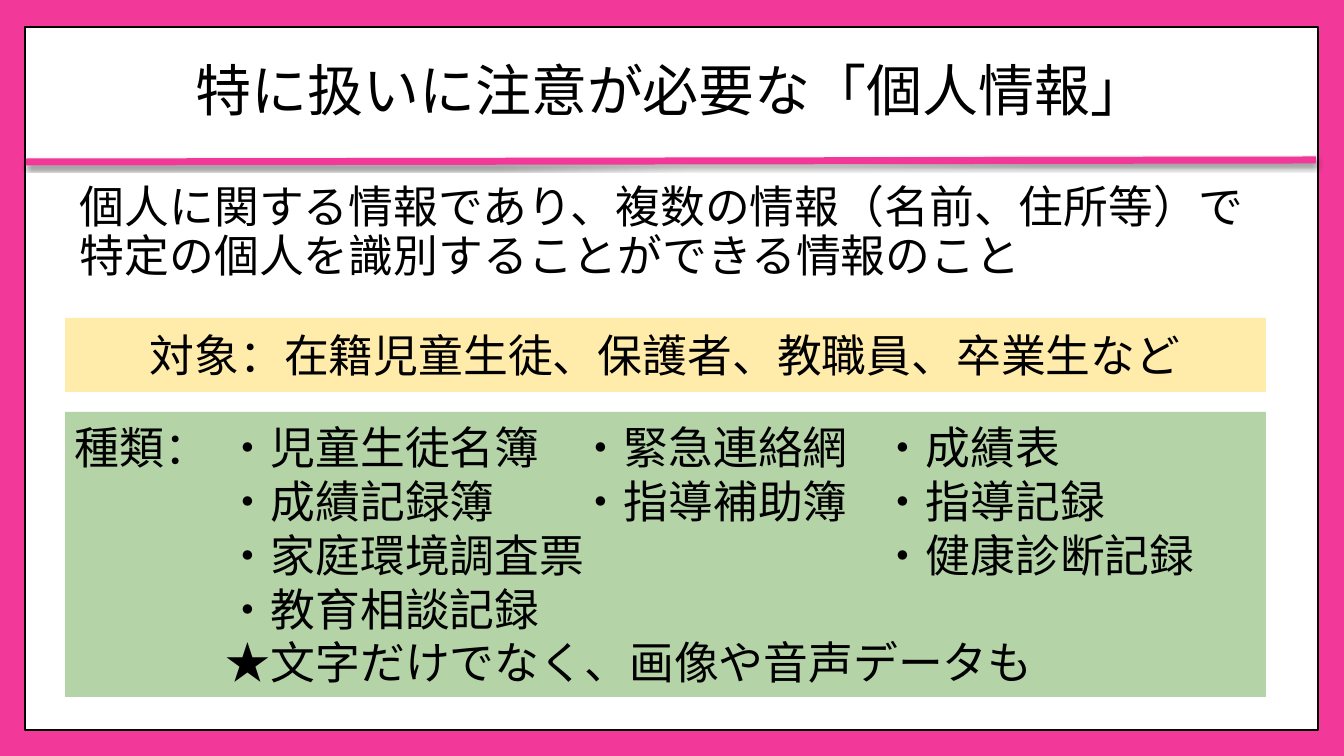
from lxml import etree
from pptx import Presentation
from pptx.dml.color import RGBColor
from pptx.enum.shapes import MSO_CONNECTOR, MSO_SHAPE
from pptx.enum.text import MSO_ANCHOR, PP_ALIGN
from pptx.oxml.ns import qn
from pptx.util import Emu, Pt

PX = 914400 / 100.8

PINK = RGBColor(0xF2, 0x38, 0x99)
WHITE = RGBColor(0xFF, 0xFF, 0xFF)
BLACK = RGBColor(0, 0, 0)
YELLOW = RGBColor(0xFF, 0xEC, 0xAA)
GREEN = RGBColor(0xB4, 0xD4, 0xA8)

TAB_STOPS = (151, 504, 806)
KINDS = [
    "種類：\t・児童生徒名簿\t・緊急連絡網\t・成績表",
    "\t・成績記録簿\t・指導補助簿\t・指導記録",
    "\t・家庭環境調査票\t・健康診断記録",
    "\t・教育相談記録",
    "\t★文字だけでなく、画像や音声データも",
]


def px(n):
    return Emu(round(n * PX))


class SlideBuilder:
    def __init__(self, slide, font="Arial", size=32):
        self.slide, self.font, self.size = slide, font, size

    def background(self, color):
        fill = self.slide.background.fill
        fill.solid()
        fill.fore_color.rgb = color

    def rect(self, x, y, w, h, color, outline=None):
        sp = self.slide.shapes.add_shape(MSO_SHAPE.RECTANGLE, px(x), px(y), px(w), px(h))
        sp.shadow.inherit = False
        sp.fill.solid()
        sp.fill.fore_color.rgb = color
        if outline is None:
            sp.line.fill.background()
        else:
            sp.line.color.rgb = outline
            sp.line.width = Pt(1)
        return sp

    def textbox(self, x, y, w, h):
        return self.slide.shapes.add_textbox(px(x), px(y), px(w), px(h))

    def rule(self, x1, y1, x2, y2, color, width):
        line = self.slide.shapes.add_connector(
            MSO_CONNECTOR.STRAIGHT, px(x1), px(y1), px(x2), px(y2))
        line.line.color.rgb = color
        line.line.width = Pt(width)
        # Soft shadow straight below the line
        effects = etree.SubElement(line._element.spPr, qn("a:effectLst"))
        shadow = etree.SubElement(effects, qn("a:outerShdw"), blurRad=str(Pt(3)),
                                  dist=str(Pt(2)), dir="5400000", rotWithShape="0")
        tint = etree.SubElement(shadow, qn("a:srgbClr"), val=str(BLACK))
        etree.SubElement(tint, qn("a:alpha"), val="45000")

    def text(self, sp, lines, align=PP_ALIGN.LEFT, anchor=MSO_ANCHOR.MIDDLE,
             font=None, size=None, spacing=1.0, before=0, indent=0, tabs=()):
        tf = sp.text_frame
        tf.word_wrap = True
        tf.vertical_anchor = anchor
        for i, line in enumerate(lines):
            p = tf.paragraphs[0] if i == 0 else tf.add_paragraph()
            p.add_run().text = line
            p.alignment = align
            p.line_spacing = spacing
            p.space_before = Pt(before)
            p.font.name = font or self.font
            p.font.size = Pt(size or self.size)
            p.font.color.rgb = BLACK
            pPr = p._p.get_or_add_pPr()
            pPr.set("marL", str(px(indent)))
            if tabs:
                tab_list = etree.Element(qn("a:tabLst"))
                for stop in tabs:
                    etree.SubElement(tab_list, qn("a:tab"), pos=str(px(stop)), algn="l")
                pPr.find(qn("a:defRPr")).addprevious(tab_list)


def main():
    prs = Presentation()
    prs.slide_width, prs.slide_height = px(1344), px(756)
    s = SlideBuilder(prs.slides.add_slide(prs.slide_layouts[6]))

    # Frame and rule under the title
    s.background(PINK)
    s.rect(25, 27, 1293, 703, WHITE, outline=BLACK)
    s.rule(26, 162, 1316, 160, PINK, 5)

    # Title
    s.text(s.textbox(26, 36, 1290, 115), ["特に扱いに注意が必要な「個人情報」"],
           align=PP_ALIGN.CENTER, font="Roboto", size=40, spacing=0.9)

    # Definition
    s.text(s.textbox(65, 180, 1210, 120),
           ["個人に関する情報であり、複数の情報（名前、住所等）で特定の個人を識別することができる情報のこと"],
           anchor=MSO_ANCHOR.TOP, spacing=0.9, before=14, indent=5)

    # People concerned
    s.text(s.rect(65, 318, 1201, 74, YELLOW),
           ["対象：在籍児童生徒、保護者、教職員、卒業生など"], align=PP_ALIGN.CENTER)

    # Kinds of information
    s.text(s.rect(65, 412, 1201, 285, GREEN), KINDS, tabs=TAB_STOPS)

    prs.save("out.pptx")


if __name__ == "__main__":
    main()
